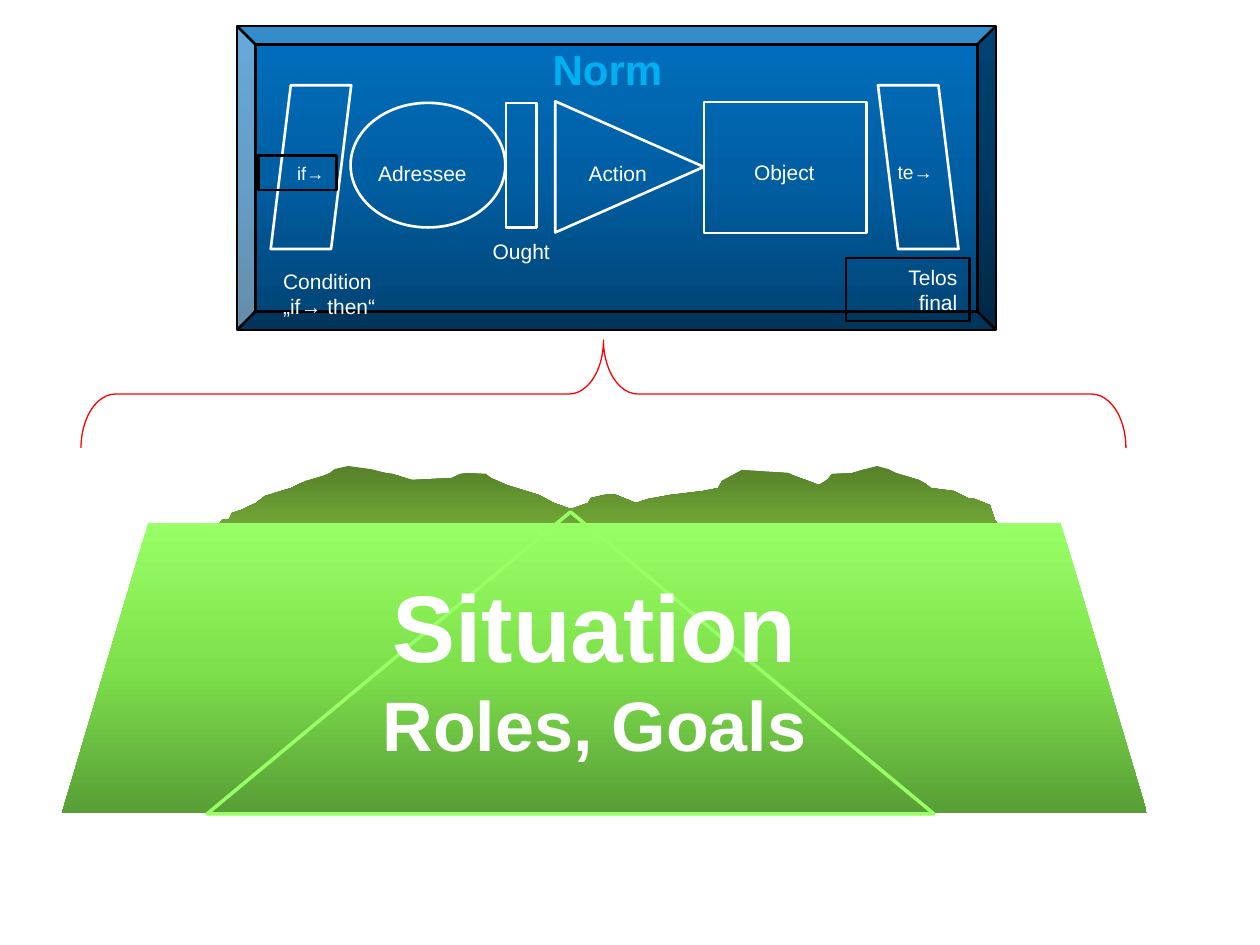
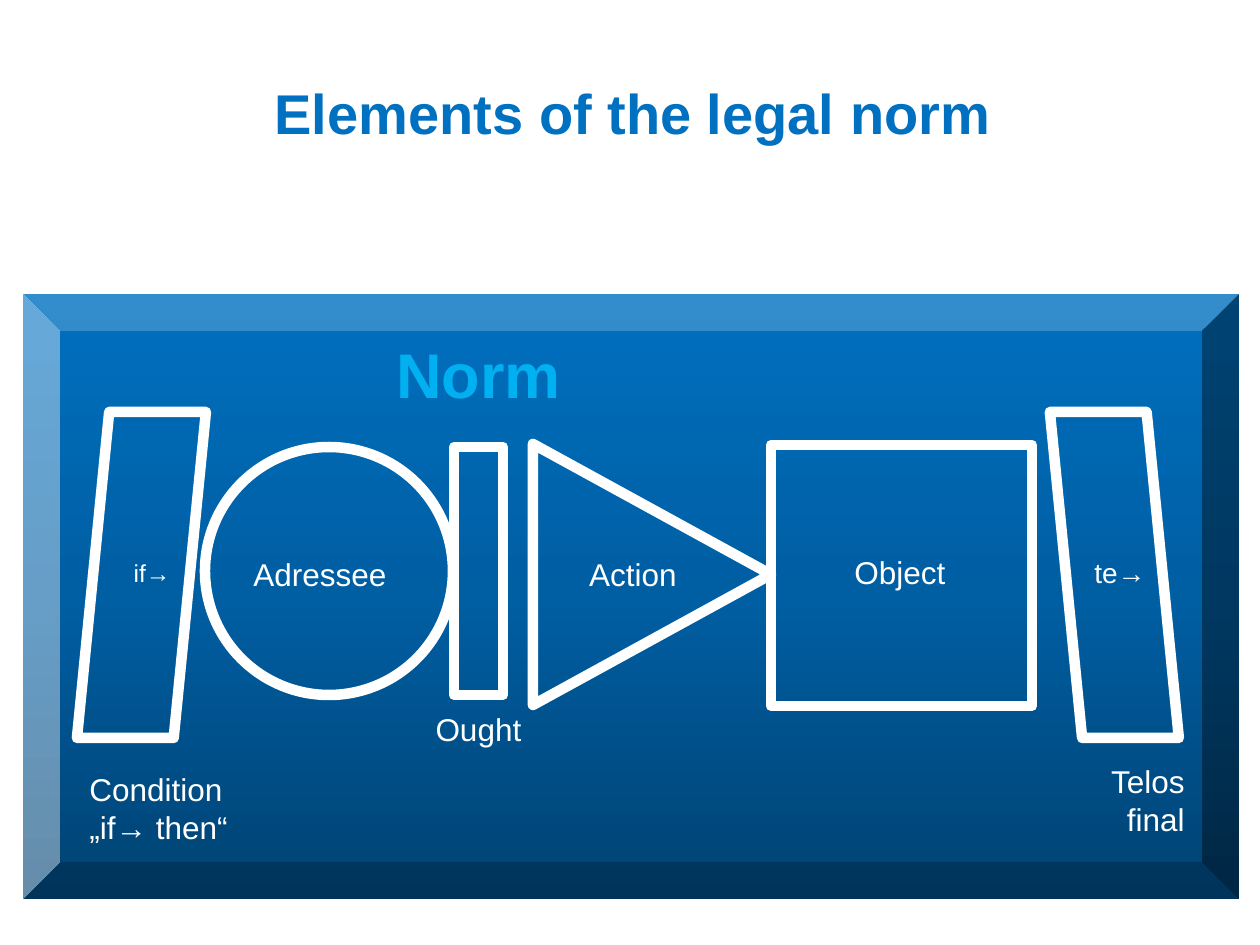
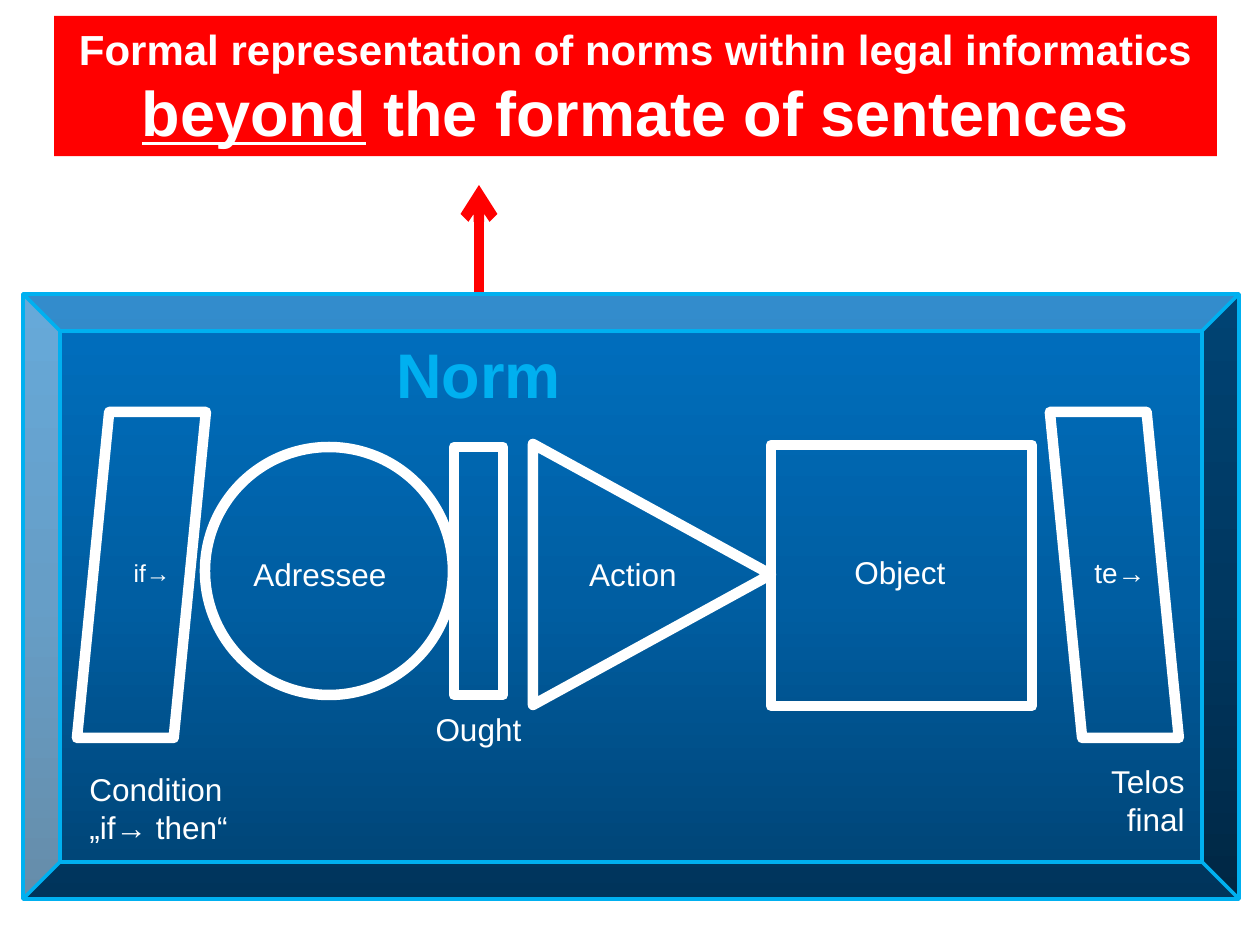
"""Build three slides on the elements of a legal norm."""
from lxml.etree import SubElement
from pptx import Presentation
from pptx.dml.color import RGBColor
from pptx.enum.shapes import MSO_CONNECTOR, MSO_SHAPE
from pptx.enum.text import MSO_ANCHOR, MSO_AUTO_SIZE, PP_ALIGN
from pptx.oxml.ns import qn
from pptx.util import Emu, Pt

PX = 914400 // 126
WHITE = RGBColor(255, 255, 255)
BLACK = RGBColor(0, 0, 0)
RED = RGBColor(255, 0, 0)
BLUE = RGBColor(0, 112, 192)
SKY = RGBColor(0, 176, 240)
LIME = RGBColor(153, 255, 102)
DEEP = (BLUE, RGBColor(0, 94, 162), RGBColor(0, 66, 114))
FIELD = (LIME, RGBColor(126, 225, 76), RGBColor(88, 158, 54))
HILL = (RGBColor(87, 129, 42), RGBColor(123, 183, 59), RGBColor(146, 218, 70))
LEFT, MID, RIGHT = PP_ALIGN.LEFT, PP_ALIGN.CENTER, PP_ALIGN.RIGHT

FRAME = (23, 294, 1216, 605)
SMALL = (237, 26, 759, 304)
PARTS = [
    (MSO_SHAPE.OVAL, (205, 447, 248, 248), {}),
    (MSO_SHAPE.RECTANGLE, (454, 447, 49, 248), {}),
    (MSO_SHAPE.ISOSCELES_TRIANGLE, (533, 444, 238, 261), {"turn": 90}),
    (MSO_SHAPE.RECTANGLE, (771, 445, 261, 261), {}),
    (MSO_SHAPE.PARALLELOGRAM, (77, 412, 129, 326), {}),
    (MSO_SHAPE.PARALLELOGRAM, (1050, 412, 129, 326), {"flip": True}),
]
LABELS = {
    "Norm": ((156, 329, 645), MID),
    "Adressee": ((146, 549, 348), MID),
    "Ought": ((156, 704, 645), MID),
    "Action": ((415, 549, 436), MID),
    "Object": ((682, 547, 436), MID),
    "Condition\n„if→ then“": ((77, 764, 198), LEFT),
    "Telos\nfinal": ((999, 756, 198), RIGHT),
    "if→": ((57, 552, 126), RIGHT),
    "te→": ((1032, 549, 126), RIGHT),
}
BIG_TYPE = {"Norm": 36, "if→": 14, "te→": 16, "rest": 18}
LOW_TYPE = {"Norm": 24, "if→": 10.5, "te→": 11, "rest": 12}
BOXED = ("Telos\nfinal", "if→")
RIDGE = [
    (207, 539), (217, 527), (222, 520), (229, 519), (232, 513), (241, 510),
    (256, 503), (265, 496), (281, 491), (291, 488), (299, 484), (306, 481),
    (323, 476), (330, 473), (335, 469), (348, 466), (370, 469), (386, 473),
    (393, 474), (412, 480), (452, 478), (460, 474), (467, 473), (486, 474),
    (491, 478), (507, 485), (539, 495), (554, 503), (571, 509), (588, 503),
    (591, 498), (604, 495), (614, 494), (636, 503), (648, 499), (670, 495),
    (703, 491), (718, 488), (722, 481), (742, 470), (788, 473), (795, 476),
    (806, 480), (819, 485), (827, 480), (832, 474), (852, 473), (862, 470),
    (877, 466), (888, 469), (896, 473), (919, 480), (926, 484), (931, 488),
    (954, 491), (968, 498), (975, 499), (990, 505), (995, 520), (1000, 527),
    (980, 543), (963, 557), (908, 596), (872, 607), (801, 617), (745, 625),
    (665, 634), (415, 633), (340, 617), (296, 601), (229, 575), (212, 559),
]
SCENE = [
    [("Situation", {"size": Pt(54), "bold": True})],
    [("Roles, Goals", {"size": Pt(40), "bold": True})],
]
HEAD = [[("Elements of the legal norm", {"size": Pt(32), "bold": True})]]
CLAIM = [
    [("Formal representation of norms within legal informatics",
      {"size": Pt(24), "bold": True})],
    [("beyond", {"size": Pt(36), "bold": True, "underline": True}),
     (" the formate of sentences", {"size": Pt(36), "bold": True})],
]


def emu(box):
    return [Emu(round(n * PX)) for n in box]


def blend(shape, tones):
    shape.fill.gradient()
    shape.fill.gradient_angle = 270
    stops = shape.element.spPr.find(qn("a:gradFill")).find(qn("a:gsLst"))
    for stop in list(stops):
        stops.remove(stop)
    for pos, tone in zip((0, 50000, 100000), tones):
        stop = SubElement(stops, qn("a:gs"), pos=str(pos))
        SubElement(stop, qn("a:srgbClr"), val=str(tone))


def style(shape, tones=None, line=None):
    shape.shadow.inherit = False
    if tones:
        blend(shape, tones)
    else:
        shape.fill.background()
    if line:
        shape.line.color.rgb, shape.line.width = line[0], Pt(line[1])
    else:
        shape.line.fill.background()


def put(shapes, kind, box, tones=None, line=None, turn=0, flip=False, bend=()):
    x, y, w, h = box
    if turn:
        x, y, w, h = x + (w - h) / 2, y + (h - w) / 2, h, w
    shape = shapes.add_shape(kind, *emu((x, y, w, h)))
    shape.rotation = turn
    for i, part in enumerate(bend):
        shape.adjustments[i] = part
    if flip:
        shape.element.spPr.xfrm.set("flipH", "1")
    style(shape, tones, line)


def write(frame, rows, tone, align=MID):
    form = {"word_wrap": True, "auto_size": MSO_AUTO_SIZE.SHAPE_TO_FIT_TEXT}
    for key, val in form.items():
        setattr(frame, key, val)
    for i, row in enumerate(rows):
        para = frame.add_paragraph() if i else frame.paragraphs[0]
        para.alignment = align
        for text, look in row:
            run = para.add_run()
            run.text = text
            run.font.color.rgb = tone
            for key, val in {"name": "Arial", **look}.items():
                setattr(run.font, key, val)


def label(shapes, spot, rows, tone, align=MID, line=None):
    high = sum(row[0][1]["size"].pt for row in rows) * 1.2 + 7.2
    box = shapes.add_textbox(*emu((*spot, high * 126 / 72)))
    if line:
        style(box, line=line)
    write(box.text_frame, rows, tone, align)


def title(slide, box, rows, tone):
    head = slide.shapes.title
    head.left, head.top, head.width, head.height = emu(box)
    write(head.text_frame, rows, tone)
    head.text_frame.vertical_anchor = MSO_ANCHOR.MIDDLE
    return head


def norm(shapes, frame=FRAME, sizes=BIG_TYPE, pen=6, edge=None, moved=None, boxed=()):
    zoom_x, zoom_y = frame[2] / FRAME[2], frame[3] / FRAME[3]

    def fit(x, y, w, h=0):
        return (frame[0] + (x - FRAME[0]) * zoom_x,
                frame[1] + (y - FRAME[1]) * zoom_y, w * zoom_x, h * zoom_y)

    put(shapes, MSO_SHAPE.BEVEL, frame, DEEP, edge, bend=[0.061])
    for kind, box, look in PARTS:
        put(shapes, kind, fit(*box), line=(WHITE, pen), **look)
    for text, (spot, align) in LABELS.items():
        head = text == "Norm"
        look = {"size": Pt(sizes.get(text, sizes["rest"])), "bold": head}
        rows = [[(part, look)] for part in text.split("\n")]
        place = (moved or {}).get(text) or fit(*spot)[:3]
        label(shapes, place, rows, SKY if head else WHITE, align,
              (BLACK, 1.5) if text in boxed else None)


def situation(slide):
    shapes = slide.shapes
    pen = shapes.build_freeform(*RIDGE[0], scale=PX)
    pen.add_line_segments(RIDGE[1:], close=True)
    style(pen.convert_to_shape(), HILL)
    put(shapes, MSO_SHAPE.TRAPEZOID, (62, 523, 1085, 290), FIELD, bend=[0.297])
    put(shapes, MSO_SHAPE.ISOSCELES_TRIANGLE, (207, 512, 727, 302), line=(LIME, 2))
    label(shapes, (62, 562, 1065), SCENE, WHITE)
    put(shapes, MSO_SHAPE.RIGHT_BRACE, (81, 340, 1045, 108), line=(RED, 0.75),
        turn=270, bend=[0.319, 0.5])
    norm(shapes, SMALL, LOW_TYPE, 1.5, (BLACK, 1.5), {"Norm": (406, 37, 403)}, BOXED)


def elements(slide):
    norm(slide.shapes.add_group_shape().shapes)
    title(slide, (6, 72, 1254, 81), HEAD, BLUE)


def beyond(slide):
    head = title(slide, (54, 16, 1163, 140), CLAIM, WHITE)
    head.fill.solid()
    head.fill.fore_color.rgb = RED
    arrow = slide.shapes.add_connector(MSO_CONNECTOR.STRAIGHT, *emu((479, 309, 479, 185)))
    arrow.line.color.rgb, arrow.line.width = RED, Pt(6)
    SubElement(arrow.line._get_or_add_ln(), qn("a:tailEnd"), type="arrow")
    SubElement(arrow.element.spPr, qn("a:effectLst"))
    norm(slide.shapes, edge=(SKY, 2))


def main():
    deck = Presentation()
    deck.slide_width, deck.slide_height = emu((1260, 945))
    for draw, layout in ((situation, 6), (elements, 5), (beyond, 5)):
        draw(deck.slides.add_slide(deck.slide_layouts[layout]))
    deck.save("out.pptx")


if __name__ == "__main__":
    main()
